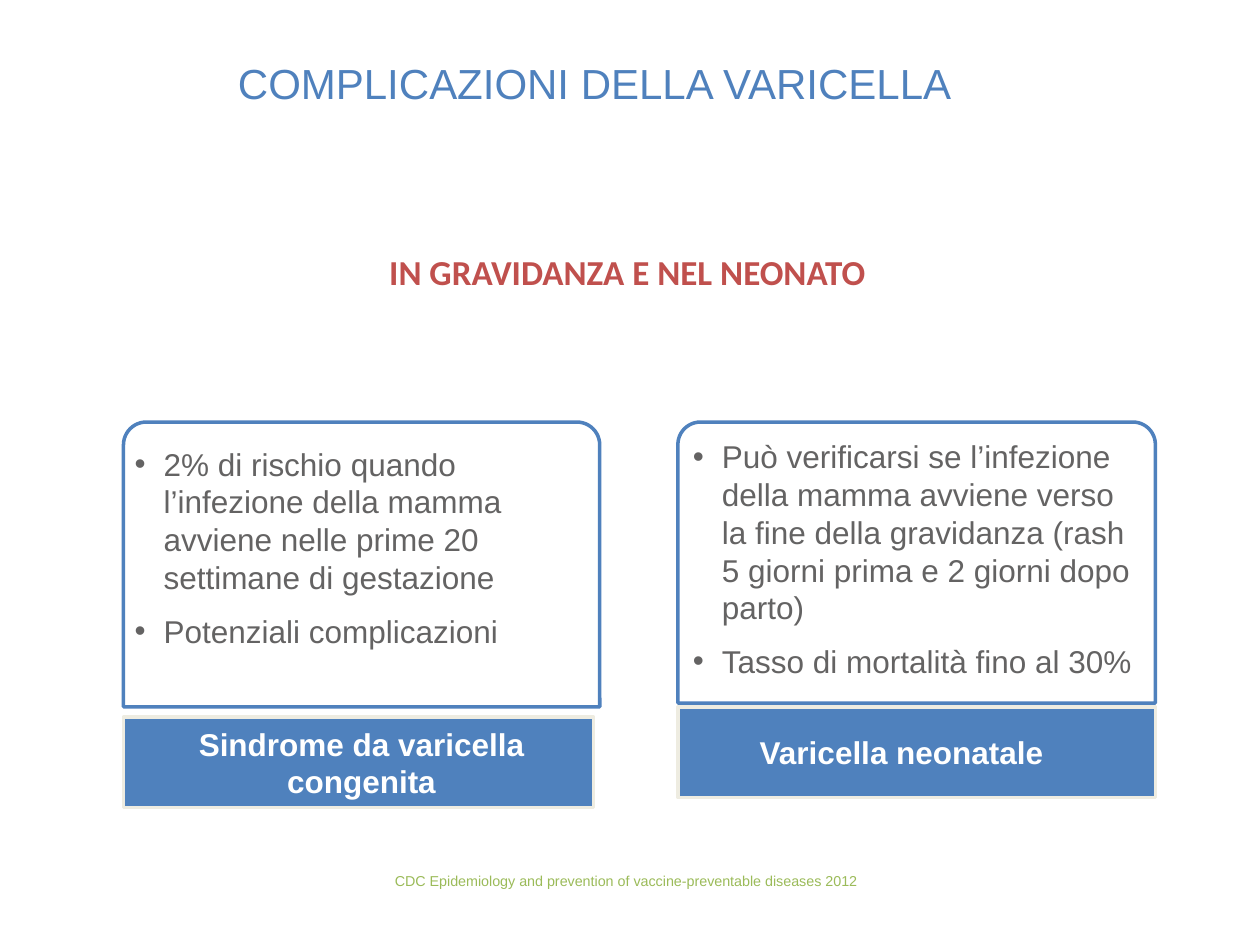
"""Build the slide on varicella complications in pregnancy and in the newborn."""
from dataclasses import dataclass

from lxml import etree
from pptx import Presentation
from pptx.dml.color import RGBColor
from pptx.enum import shapes, text
from pptx.oxml import ns
from pptx.util import Inches, Pt

BLUE = RGBColor(0x4F, 0x81, 0xBD)
RED = RGBColor(0xC0, 0x50, 0x4D)
GREEN = RGBColor(0x9B, 0xBB, 0x59)
GRAY = RGBColor(0x64, 0x63, 0x63)
CREAM = RGBColor(0xEE, 0xEC, 0xE1)
WHITE = RGBColor(0xFF, 0xFF, 0xFF)

Box = tuple[float, float, float, float]
Insets = tuple[float, float, float, float]
DEFAULT_INSETS: Insets = (0.1, 0.05, 0.1, 0.05)
LABEL_INSETS: Insets = (0.08, 0, 0.03, 0)


@dataclass(frozen=True)
class Style:
    size: float
    color: RGBColor
    bold: bool = False
    font: str = "Arial"
    align: text.PP_ALIGN = text.PP_ALIGN.CENTER
    anchor: text.MSO_ANCHOR = text.MSO_ANCHOR.MIDDLE
    bulleted: bool = False


@dataclass(frozen=True)
class Complication:
    name: str
    facts: tuple[str, ...]
    frame: Box
    facts_box: Box
    facts_insets: Insets
    banner: Box
    name_box: Box
    name_align: text.PP_ALIGN


TITLE = Style(24, BLUE)
SUBTITLE = Style(20, RED, bold=True, font="Calibri", anchor=text.MSO_ANCHOR.TOP)
CITATION = Style(8.2, GREEN, anchor=text.MSO_ANCHOR.BOTTOM)
FACTS = Style(18, GRAY, align=text.PP_ALIGN.LEFT, anchor=text.MSO_ANCHOR.TOP, bulleted=True)

COMPLICATIONS = (
    Complication(
        "Sindrome da varicella congenita",
        ("2% di rischio quando l’infezione della mamma avviene nelle prime 20 "
         "settimane di gestazione",
         "Potenziali complicazioni"),
        (0.98, 3.35, 3.78, 2.26), (0.97, 3.48, 3.8, 1.96), DEFAULT_INSETS,
        (0.98, 5.69, 3.73, 0.72), (0.98, 5.69, 3.73, 0.72), text.PP_ALIGN.CENTER),
    Complication(
        "Varicella neonatale",
        ("Può verificarsi se l’infezione della mamma avviene verso la fine della "
         "gravidanza (rash 5 giorni prima e 2 giorni dopo parto)",
         "Tasso di mortalità fino al 30%"),
        (5.38, 3.35, 3.79, 2.23), (5.5, 3.47, 3.56, 1.71), (0, 0, 0, 0),
        (5.38, 5.61, 3.79, 0.72), (5.95, 5.61, 2.67, 0.72), text.PP_ALIGN.LEFT),
)


def add_bullet(paragraph) -> None:
    properties = paragraph._p.get_or_add_pPr()
    properties.set("marL", str(Inches(0.23)))
    properties.set("indent", str(-Inches(0.23)))
    etree.SubElement(properties, ns.qn("a:buFont")).set("typeface", "Arial")
    etree.SubElement(properties, ns.qn("a:buChar")).set("char", "•")


def write(holder, lines: tuple[str, ...], style: Style,
          insets: Insets = DEFAULT_INSETS) -> None:
    frame = holder.text_frame
    frame.text = "\n".join(lines)
    frame.word_wrap = True
    frame.auto_size = text.MSO_AUTO_SIZE.NONE
    frame.vertical_anchor = style.anchor
    (frame.margin_left, frame.margin_top,
     frame.margin_right, frame.margin_bottom) = map(Inches, insets)
    for index, paragraph in enumerate(frame.paragraphs):
        paragraph.alignment = style.align
        if index:
            paragraph.space_before = Pt(9)
        if style.bulleted:
            add_bullet(paragraph)
        for run in paragraph.runs:
            run.font.name = style.font
            run.font.size = Pt(style.size)
            run.font.bold = style.bold
            run.font.color.rgb = style.color


def add_text(slide, box: Box, lines: tuple[str, ...], style: Style,
             insets: Insets = DEFAULT_INSETS) -> None:
    write(slide.shapes.add_textbox(*map(Inches, box)), lines, style, insets)


def add_panel(slide, preset: shapes.MSO_SHAPE, box: Box, fill: RGBColor, line: RGBColor):
    panel = slide.shapes.add_shape(preset, *map(Inches, box))
    panel.shadow.inherit = False
    panel.fill.solid()
    panel.fill.fore_color.rgb = fill
    panel.line.color.rgb = line
    panel.line.width = Pt(2)
    return panel


def add_complication(slide, item: Complication) -> None:
    frame = add_panel(slide, shapes.MSO_SHAPE.ROUND_2_SAME_RECTANGLE, item.frame, WHITE, BLUE)
    frame.adjustments[0] = 0.08
    add_panel(slide, shapes.MSO_SHAPE.RECTANGLE, item.banner, BLUE, CREAM)
    add_text(slide, item.facts_box, item.facts, FACTS, item.facts_insets)
    add_text(slide, item.name_box, (item.name,),
             Style(18, WHITE, bold=True, align=item.name_align), LABEL_INSETS)


def main() -> None:
    presentation = Presentation()
    presentation.slide_width, presentation.slide_height = Inches(10), Inches(7.5)
    slide = presentation.slides.add_slide(presentation.slide_layouts[5])
    title = slide.shapes.title
    title.left, title.top, title.width, title.height = map(Inches, (0.41, 0.32, 8.62, 0.67))
    write(title, ("COMPLICAZIONI DELLA VARICELLA",), TITLE)
    add_text(slide, (0.66, 6.66, 8.62, 0.45),
             ("CDC Epidemiology and prevention of vaccine-preventable diseases 2012",), CITATION)
    add_text(slide, (0.41, 1.94, 9.14, 0.63), ("IN GRAVIDANZA E NEL NEONATO",), SUBTITLE)
    for item in COMPLICATIONS:
        add_complication(slide, item)
    presentation.save("out.pptx")


if __name__ == "__main__":
    main()
